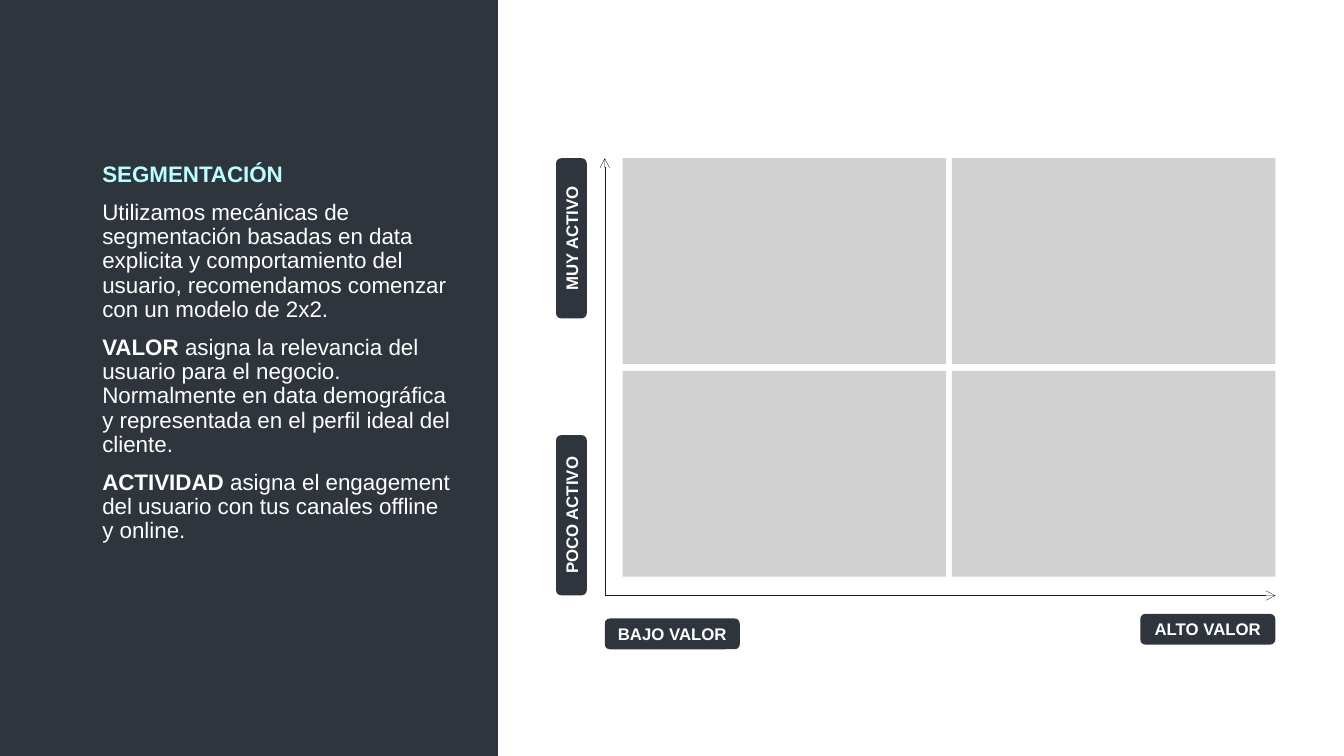
from lxml import etree
from pptx import Presentation
from pptx.dml.color import RGBColor
from pptx.enum.shapes import MSO_CONNECTOR, MSO_SHAPE
from pptx.enum.text import MSO_ANCHOR, PP_ALIGN
from pptx.oxml.ns import qn
from pptx.util import Pt

COLORS = {
    "dark": "2F353D",
    "aqua": "B9FFFF",
    "white": "FFFFFF",
    "quadrant": "D1D1D1",
    "axis": "1C1C1C",
}


def add_run(paragraph, text, size=16, color="white", bold=False):
    run = paragraph.add_run()
    run.text = text
    run.font.name = "Arial"
    run.font.size = Pt(size)
    run.font.bold = bold
    run.font.color.rgb = RGBColor.from_string(COLORS[color])


def add_block(kind, left, top, width, height, color):
    shape = slide.shapes.add_shape(kind, Pt(left), Pt(top), Pt(width), Pt(height))
    shape.shadow.inherit = False
    shape.fill.solid()
    shape.fill.fore_color.rgb = RGBColor.from_string(COLORS[color])
    shape.line.fill.background()
    return shape


presentation = Presentation()
presentation.slide_width = Pt(960)
presentation.slide_height = Pt(540)
slide = presentation.slides.add_slide(presentation.slide_layouts[6])

add_block(MSO_SHAPE.RECTANGLE, 0, 0, 355.7, 540, "dark")

body = slide.shapes.add_textbox(Pt(66), Pt(113), Pt(266.4), Pt(373))
body.text_frame.word_wrap = True
body_paragraphs = [
    [("SEGMENTACIÓN", {"color": "aqua", "bold": True})],
    [("Utilizamos mecánicas de segmentación basadas en data explicita y "
      "comportamiento del usuario, recomendamos comenzar con un modelo de 2x2.", {})],
    [("VALOR ", {"bold": True}),
     ("asigna la relevancia del usuario para el negocio. Normalmente en data "
      "demográfica y representada en el perfil ideal del cliente.", {})],
    [("ACTIVIDAD", {"bold": True}),
     (" asigna el engagement del usuario con tus canales offline y online.", {})],
]
for index, runs in enumerate(body_paragraphs):
    paragraph = body.text_frame.paragraphs[0]
    if index:
        paragraph = body.text_frame.add_paragraph()
        paragraph.space_before = Pt(10)
    paragraph.line_spacing = 0.9
    for text, text_format in runs:
        add_run(paragraph, text, **text_format)

grid_left, grid_top = 444.7, 113
quadrant_width, quadrant_height = 231.2, 147
column_gap, row_gap = 4, 5
for row in range(2):
    for column in range(2):
        add_block(
            MSO_SHAPE.RECTANGLE,
            grid_left + column * (quadrant_width + column_gap),
            grid_top + row * (quadrant_height + row_gap),
            quadrant_width,
            quadrant_height,
            "quadrant",
        )

origin_x, origin_y = 432, 425.4
axis_right = grid_left + 2 * quadrant_width + column_gap
for end_x, end_y in [(origin_x, grid_top), (axis_right, origin_y)]:
    axis = slide.shapes.add_connector(
        MSO_CONNECTOR.STRAIGHT, Pt(origin_x), Pt(origin_y), Pt(end_x), Pt(end_y)
    )
    axis.line.color.rgb = RGBColor.from_string(COLORS["axis"])
    axis.line.width = Pt(0.25)
    etree.SubElement(axis.line._get_or_add_ln(), qn("a:tailEnd"), type="arrow")
    etree.SubElement(axis._element.spPr, qn("a:effectLst"))

tags = [
    ("BAJO VALOR", 432, 441.8, 96.5, 0),
    ("ALTO VALOR", 814.5, 438.5, 96.5, 0),
    ("POCO ACTIVO", 351, 357, 114.4, 270),
    ("MUY ACTIVO", 351, 159.2, 114.4, 270),
]
for text, left, top, width, rotation in tags:
    tag = add_block(MSO_SHAPE.ROUNDED_RECTANGLE, left, top, width, 22, "dark")
    tag.rotation = rotation
    frame = tag.text_frame
    frame.word_wrap = True
    frame.vertical_anchor = MSO_ANCHOR.MIDDLE
    frame.paragraphs[0].alignment = PP_ALIGN.CENTER
    add_run(frame.paragraphs[0], text, size=12, bold=True)

presentation.save("out.pptx")
